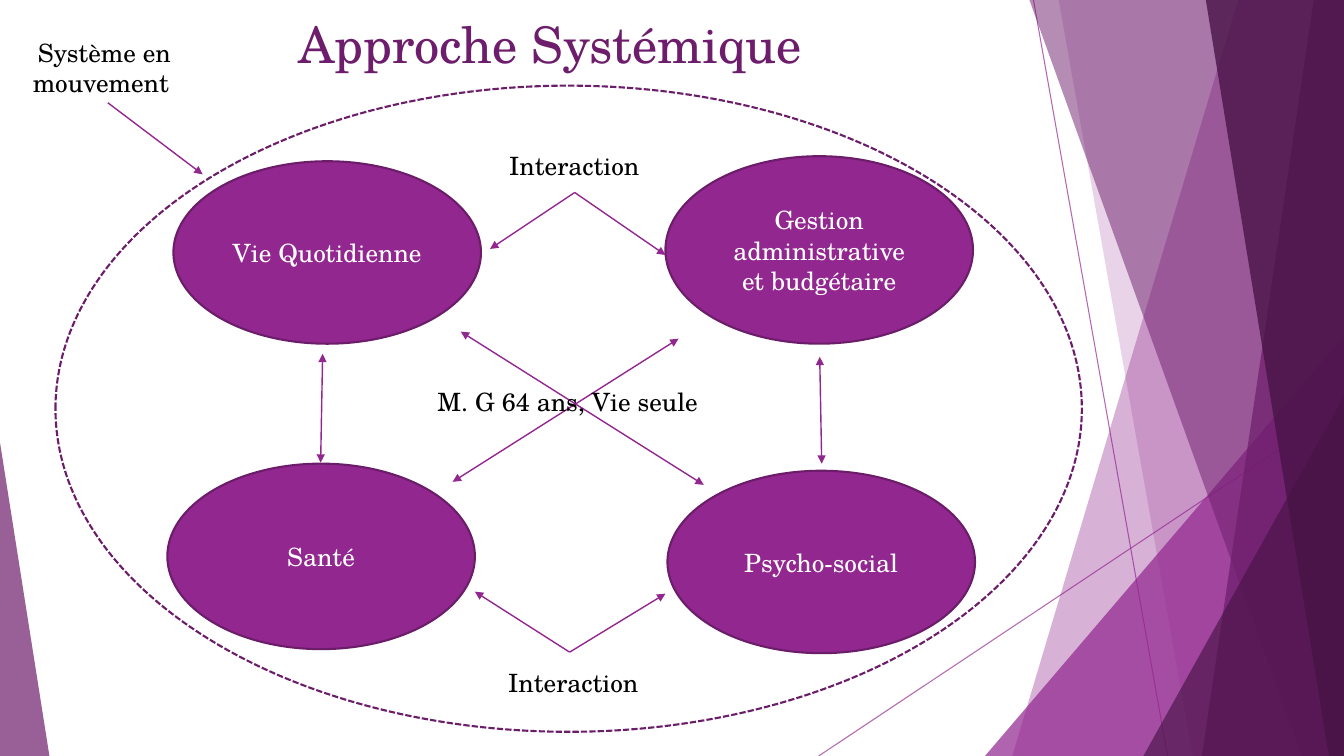
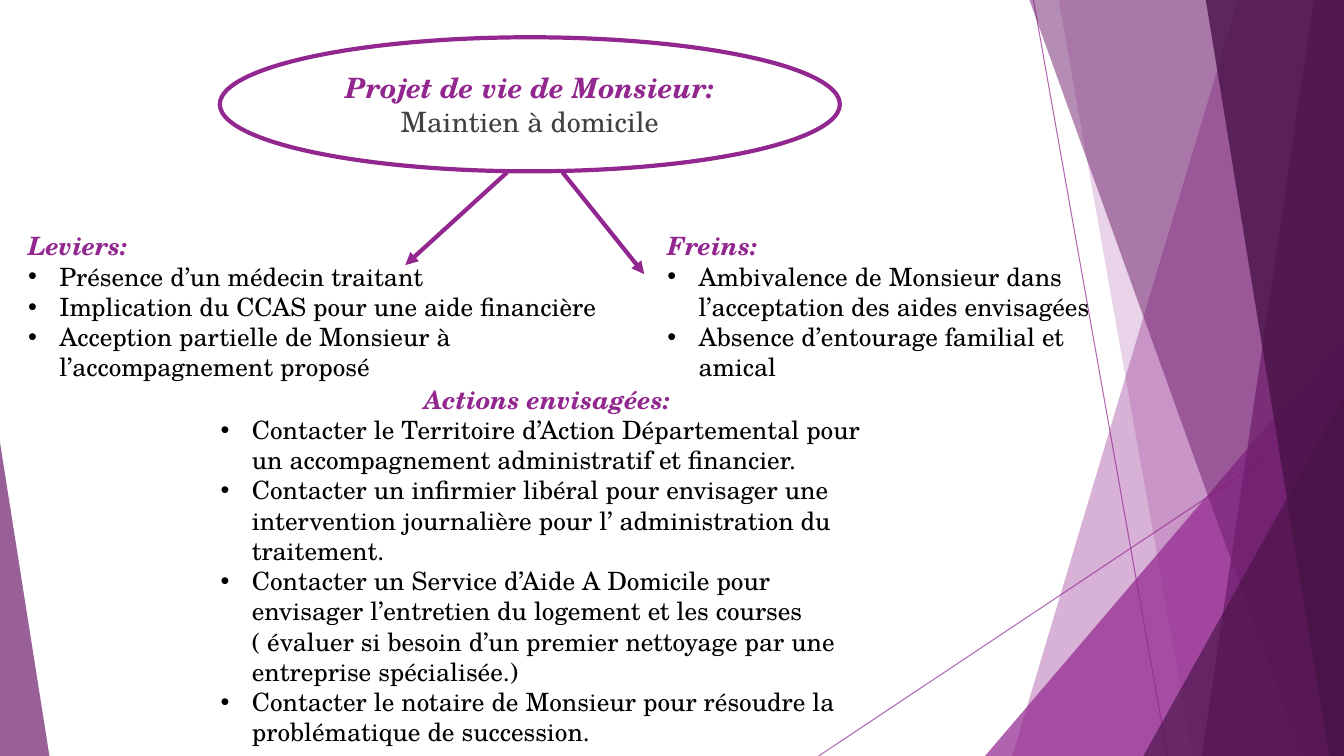
import dataclasses

import lxml.etree
import pptx
import pptx.dml.color
import pptx.enum.dml
import pptx.enum.shapes
import pptx.enum.text
import pptx.oxml.ns
import pptx.util

Inches = pptx.util.Inches
Shapes = pptx.enum.shapes.MSO_SHAPE
Align = pptx.enum.text.PP_ALIGN
Anchor = pptx.enum.text.MSO_ANCHOR


@dataclasses.dataclass(frozen=True)
class Theme:
    font: str = "TeX Gyre Schola"
    accent: str = "92278F"
    dark: str = "6D1D6B"
    darkest: str = "491447"
    outline: str = "6C1D6A"
    white: str = "FFFFFF"
    black: str = "000000"
    grey: str = "404040"
    title_size: int = 36
    goal_size: int = 20
    body_size: int = 18
    hairline: float = 0.75
    thin: float = 1
    medium: float = 1.5
    thick: float = 3


@dataclasses.dataclass(frozen=True)
class Box:
    left: float
    top: float
    width: float
    height: float

    def inner(self, left, top, width, height):
        return Box(self.left + left, self.top + top, width, height)

    def point(self, x, y):
        return self.left + x, self.top + y

    def lengths(self):
        return [Inches(value) for value in (self.left, self.top, self.width, self.height)]


THEME = Theme()
SLIDE = Box(0, 0, 13.33, 7.5)


def color(value):
    return pptx.dml.color.RGBColor.from_string(value)


def add_xml(parent, tag, **attributes):
    child = lxml.etree.SubElement(parent, pptx.oxml.ns.qn(tag))
    for name, value in attributes.items():
        child.set(name, str(value))
    return child


def set_opacity(element, percent):
    for color_element in element.xpath(".//p:spPr//a:srgbClr"):
        add_xml(color_element, "a:alpha", val=percent * 1000)


def style_shape(shape, fill=None, line=None, width=0):
    shape.shadow.inherit = False
    if fill:
        shape.fill.solid()
        shape.fill.fore_color.rgb = color(fill)
    else:
        shape.fill.background()
    if line:
        shape.line.color.rgb = color(line)
        shape.line.width = pptx.util.Pt(width)
    else:
        shape.line.fill.background()


def add_line(shapes, start, end, width, head=False, tail=False):
    ends = [Inches(value) for value in (*start, *end)]
    connector = shapes.add_connector(pptx.enum.shapes.MSO_CONNECTOR.STRAIGHT, *ends)
    connector.line.color.rgb = color(THEME.accent)
    connector.line.width = pptx.util.Pt(width)
    line_element = connector.element.xpath(".//a:ln")[0]
    if head:
        add_xml(line_element, "a:headEnd", type="triangle")
    if tail:
        add_xml(line_element, "a:tailEnd", type="triangle")
    add_xml(connector.element.spPr, "a:effectLst")
    return connector


def add_run(paragraph, text, size, text_color, emphasis=False):
    run = paragraph.add_run()
    run.text = text
    run.font.name = THEME.font
    run.font.size = pptx.util.Pt(size)
    run.font.bold = emphasis
    run.font.italic = emphasis
    run.font.color.rgb = color(text_color)


def add_ellipse(slide, box, fill, line, width):
    shape = slide.shapes.add_shape(Shapes.OVAL, *box.lengths())
    style_shape(shape, fill, line, width)
    shape.text_frame.vertical_anchor = Anchor.MIDDLE
    shape.text_frame.paragraphs[0].alignment = Align.CENTER
    return shape


def add_text_box(slide, box):
    shape = slide.shapes.add_textbox(*box.lengths())
    shape.text_frame.word_wrap = True
    return shape.text_frame


def add_label(slide, box, text, alignment=Align.CENTER):
    paragraph = add_text_box(slide, box).paragraphs[0]
    paragraph.alignment = alignment
    add_run(paragraph, text, THEME.body_size, THEME.black)


def add_band(shapes, box, top_left, bottom_left, fill, opacity):
    right, bottom = box.left + box.width, box.top + box.height
    outline = [(top_left, box.top), (right, box.top), (right, bottom), (bottom_left, bottom)]
    points = [(Inches(x), Inches(y)) for x, y in outline]
    builder = shapes.build_freeform(*points[0], scale=1.0)
    builder.add_line_segments(points[1:], close=True)
    band = builder.convert_to_shape()
    style_shape(band, fill)
    set_opacity(band.element, opacity)


def add_triangle(shapes, box, apex, fill, opacity):
    triangle = shapes.add_shape(Shapes.ISOSCELES_TRIANGLE, *box.lengths())
    triangle.adjustments[0] = apex
    style_shape(triangle, fill)
    set_opacity(triangle.element, opacity)


def add_backdrop(slide, box):
    group = slide.shapes.add_group_shape()
    shapes = group.shapes
    for start, end in (((10.25, 0), (11.58, 7.5)), ((13.33, 4.03), (8.12, 7.5))):
        line = add_line(shapes, box.point(*start), box.point(*end), THEME.hairline)
        set_opacity(line.element, 70)
    add_band(shapes, box, 12.28, 10.04, THEME.accent, 36)
    add_band(shapes, box, 10.5, 11.83, THEME.accent, 20)
    add_triangle(shapes, box.inner(9.77, 3.33, 3.56, 4.17), 1, THEME.accent, 72)
    add_band(shapes, box, 10.21, 12.91, THEME.dark, 50)
    add_band(shapes, box, 13.03, 11.92, THEME.dark, 70)
    add_band(shapes, box, 11.96, 13.18, THEME.darkest, 80)
    add_triangle(shapes, box.inner(11.34, 3.93, 1.99, 3.57), 1, THEME.darkest, 66)
    add_triangle(shapes, box.inner(0, 4.39, 0.49, 3.11), 0, THEME.dark, 70)
    return group


def move_to_master(group, master):
    for number, properties in enumerate(group.element.xpath(".//p:cNvPr"), start=100):
        properties.set("id", str(number))
    master.shapes.element.insert(2, group.element)


def format_title(slide, box, text):
    title = slide.shapes.title
    title.left, title.top, title.width, title.height = box.lengths()
    title.text_frame.vertical_anchor = Anchor.TOP
    paragraph = title.text_frame.paragraphs[0]
    paragraph.alignment = Align.CENTER
    add_run(paragraph, text, THEME.title_size, THEME.dark)


def add_system_map(slide, box):
    domains = (
        ("Vie Quotidienne", 1.17, 0.75, 1.81),
        ("Santé", 1.11, 3.75, 1.84),
        ("Psycho-social", 6.07, 3.82, 1.81),
        ("Gestion administrative et budgétaire", 6.05, 0.7, 1.86),
    )
    for text, left, top, height in domains:
        domain_box = box.inner(left, top, 3.05, height)
        domain = add_ellipse(slide, domain_box, THEME.accent, THEME.outline, THEME.medium)
        add_run(domain.text_frame.paragraphs[0], text, THEME.body_size, THEME.white)

    one_way = (
        ((5.15, 1.06), (4.31, 1.62)),
        ((5.15, 1.06), (6.05, 1.68)),
        ((5.1, 5.62), (6.05, 5.04)),
        ((5.1, 5.62), (4.16, 5.02)),
        ((0.52, 0.17), (1.46, 0.88)),
    )
    two_way = (
        ((2.65, 2.66), (2.63, 3.74)),
        ((7.58, 2.69), (7.6, 3.75)),
        ((4.02, 2.44), (6.43, 3.96)),
        ((6.18, 2.51), (3.94, 3.93)),
    )
    for arrows, head in ((one_way, False), (two_way, True)):
        for start, end in arrows:
            add_line(slide.shapes, box.point(*start), box.point(*end), THEME.thin, head, True)

    system = add_ellipse(slide, box, None, THEME.outline, THEME.medium)
    system.line.dash_style = pptx.enum.dml.MSO_LINE.SQUARE_DOT

    add_label(slide, box.inner(-0.39, -0.53, 1.75, 0.71), "Système en mouvement ")
    for left, top in ((4.35, 0.59), (4.34, 5.72)):
        add_label(slide, box.inner(left, top, 1.59, 0.4), "Interaction")
    add_label(slide, box.inner(3.69, 2.93, 3.91, 0.4), "M. G 64 ans, Vie seule", Align.LEFT)


def add_goal(slide, box):
    goal = add_ellipse(slide, box, THEME.white, THEME.accent, THEME.thick)
    paragraph = goal.text_frame.paragraphs[0]
    paragraph.space_before = pptx.util.Pt(10)
    add_run(paragraph, "Projet de vie de Monsieur: ", THEME.goal_size, THEME.accent, True)
    add_run(paragraph, "Maintien à domicile", THEME.goal_size, THEME.grey)
    for start, end in (((2.85, 1.34), (1.84, 2.26)), ((3.4, 1.34), (4.21, 2.35))):
        add_line(slide.shapes, box.point(*start), box.point(*end), THEME.thick, tail=True)


def add_bullet_list(slide, box, heading, items, alignment=Align.LEFT):
    frame = add_text_box(slide, box)
    frame.paragraphs[0].alignment = alignment
    add_run(frame.paragraphs[0], heading, THEME.body_size, THEME.accent, True)
    for item in items:
        paragraph = frame.add_paragraph()
        properties = paragraph._p.get_or_add_pPr()
        properties.set("marL", str(Inches(0.31)))
        properties.set("indent", str(-Inches(0.31)))
        add_xml(properties, "a:buFont", typeface="Arial")
        add_xml(properties, "a:buChar", char="•")
        add_run(paragraph, item, THEME.body_size, THEME.black)


def build_system_slide(presentation):
    slide = presentation.slides.add_slide(presentation.slide_layouts[5])
    move_to_master(add_backdrop(slide, SLIDE), presentation.slide_master)
    format_title(slide, SLIDE.inner(2.79, 0.08, 5.33, 0.83), "Approche Systémique")
    add_system_map(slide, SLIDE.inner(0.55, 0.85, 10.18, 6.41))


def build_project_slide(presentation):
    slide = presentation.slides.add_slide(presentation.slide_layouts[6])
    add_goal(slide, SLIDE.inner(2.18, 0.37, 6.15, 1.33))
    add_bullet_list(slide, SLIDE.inner(0.18, 2.24, 6.15, 1.62), "Leviers:", (
        "Présence d’un médecin traitant",
        "Implication du CCAS pour une aide financière",
        "Acception partielle de Monsieur à l’accompagnement proposé",
    ))
    add_bullet_list(slide, SLIDE.inner(6.52, 2.24, 4.96, 1.62), "Freins:", (
        "Ambivalence de Monsieur dans l’acceptation des aides envisagées",
        "Absence d’entourage familial et amical",
    ))
    add_bullet_list(slide, SLIDE.inner(2.09, 3.76, 6.67, 3.74), "Actions envisagées:", (
        "Contacter le Territoire d’Action Départemental pour un accompagnement "
        "administratif et financier.",
        "Contacter un infirmier libéral pour envisager une intervention journalière "
        "pour l’ administration du traitement.",
        "Contacter un Service d’Aide A Domicile pour envisager l’entretien du logement "
        "et les courses ( évaluer si besoin d’un premier nettoyage par une entreprise "
        "spécialisée.)",
        "Contacter le notaire de Monsieur pour résoudre la problématique de succession.",
    ), Align.CENTER)


def main():
    presentation = pptx.Presentation()
    presentation.slide_width = Inches(SLIDE.width)
    presentation.slide_height = Inches(SLIDE.height)
    build_system_slide(presentation)
    build_project_slide(presentation)
    presentation.save("out.pptx")


if __name__ == "__main__":
    main()
